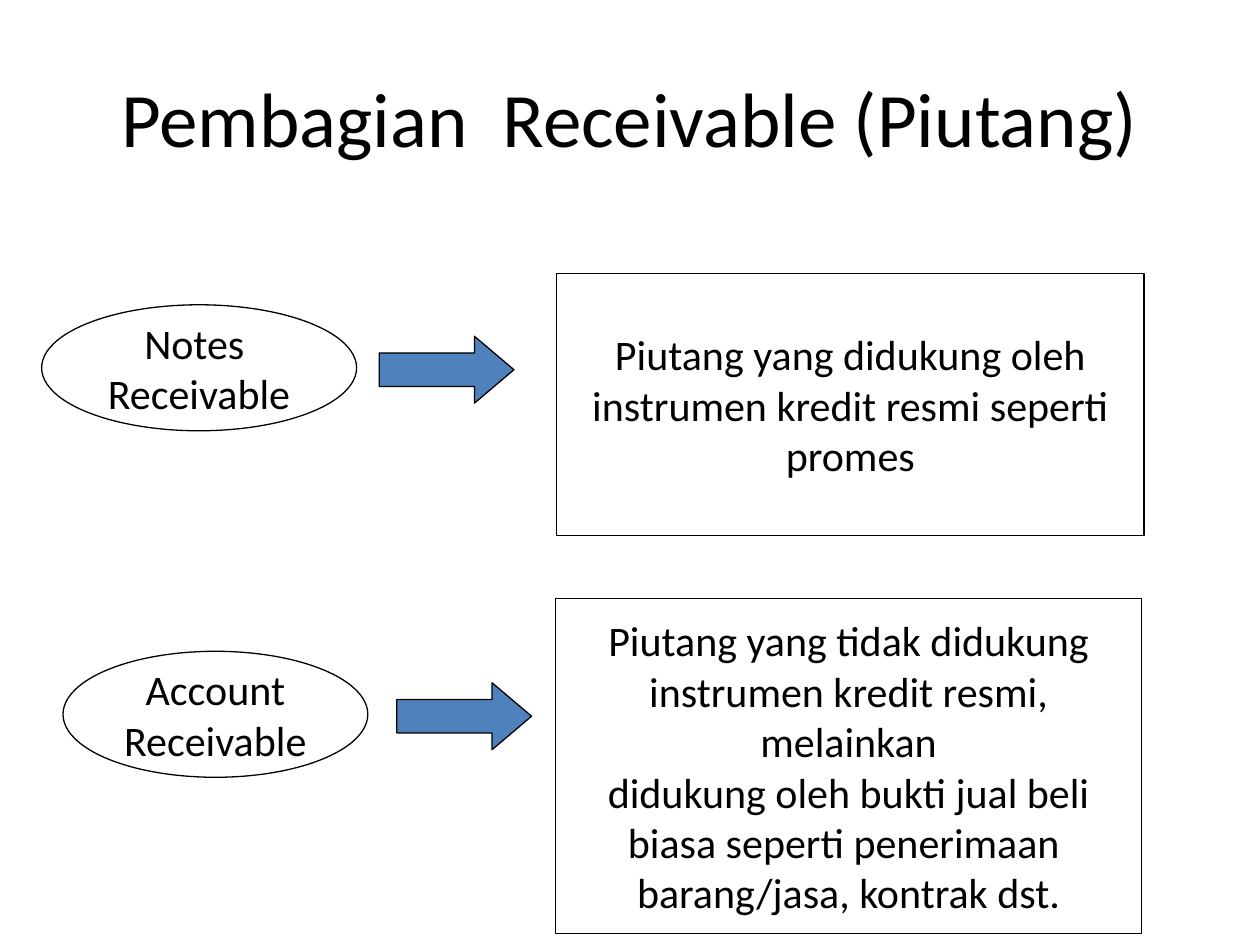
from pptx import Presentation
from pptx.dml.color import RGBColor
from pptx.enum import shapes, text
from pptx.util import Pt

TITLE = ("Pembagian  Receivable (Piutang)", (36, 21.6, 648, 90))
ROWS = [
    {
        "term": (["Notes ", "Receivable"], (23.8, 174.2, 180, 72)),
        "arrow": (216.7, 192.2),
        "meaning": (
            ["Piutang yang didukung oleh instrumen kredit resmi seperti promes"],
            (318.2, 156.2, 335.5, 149.8),
        ),
    },
    {
        "term": (["Account", "Receivable"], (36, 372.2, 174.2, 72)),
        "arrow": (226.8, 390.2),
        "meaning": (
            [
                "Piutang yang tidak didukung",
                "instrumen kredit resmi, melainkan",
                "didukung oleh bukti jual beli",
                "biasa seperti penerimaan ",
                "barang/jasa, kontrak dst.",
            ],
            (317.5, 342, 334.8, 191.5),
        ),
    },
]
ARROW_SIZE = (77, 38.2)
ARROW_ADJUSTMENTS = (0.5, 0.59)
THEME = {
    "font": "Calibri",
    "ink": RGBColor(0, 0, 0),
    "arrow": RGBColor(0x4F, 0x81, 0xBD),
    "title": Pt(44),
    "body": Pt(24),
    "line": Pt(0.75),
}


def write(sp, lines, size, wrap=True):
    tf = sp.text_frame
    tf.word_wrap = wrap
    tf.vertical_anchor = text.MSO_ANCHOR.MIDDLE
    tf.margin_left = tf.margin_right = Pt(6.5)
    tf.margin_top = tf.margin_bottom = Pt(3.2)
    for i, line in enumerate(lines):
        p = tf.add_paragraph() if i else tf.paragraphs[0]
        p.alignment = text.PP_ALIGN.CENTER
        r = p.add_run()
        r.text = line
        r.font.name = THEME["font"]
        r.font.size = size
        r.font.color.rgb = THEME["ink"]


def add_outlined(slide, kind, box, fill=None):
    sp = slide.shapes.add_shape(kind, *map(Pt, box))
    sp.shadow.inherit = False
    sp.line.color.rgb = THEME["ink"]
    sp.line.width = THEME["line"]
    if fill is None:
        sp.fill.background()
    else:
        sp.fill.solid()
        sp.fill.fore_color.rgb = fill
    return sp


def main():
    prs = Presentation()
    prs.slide_width, prs.slide_height = Pt(720), Pt(540)
    slide = prs.slides.add_slide(prs.slide_layouts[6])
    kinds = shapes.MSO_SHAPE

    heading, box = TITLE
    write(slide.shapes.add_textbox(*map(Pt, box)), [heading], THEME["title"])

    for row in ROWS:
        lines, box = row["term"]
        write(add_outlined(slide, kinds.OVAL, box), lines, THEME["body"], wrap=False)

        arrow = add_outlined(
            slide, kinds.RIGHT_ARROW, row["arrow"] + ARROW_SIZE, THEME["arrow"]
        )
        for i, value in enumerate(ARROW_ADJUSTMENTS):
            arrow.adjustments[i] = value

        lines, box = row["meaning"]
        write(add_outlined(slide, kinds.RECTANGLE, box), lines, THEME["body"])

    prs.save("out.pptx")


if __name__ == "__main__":
    main()
